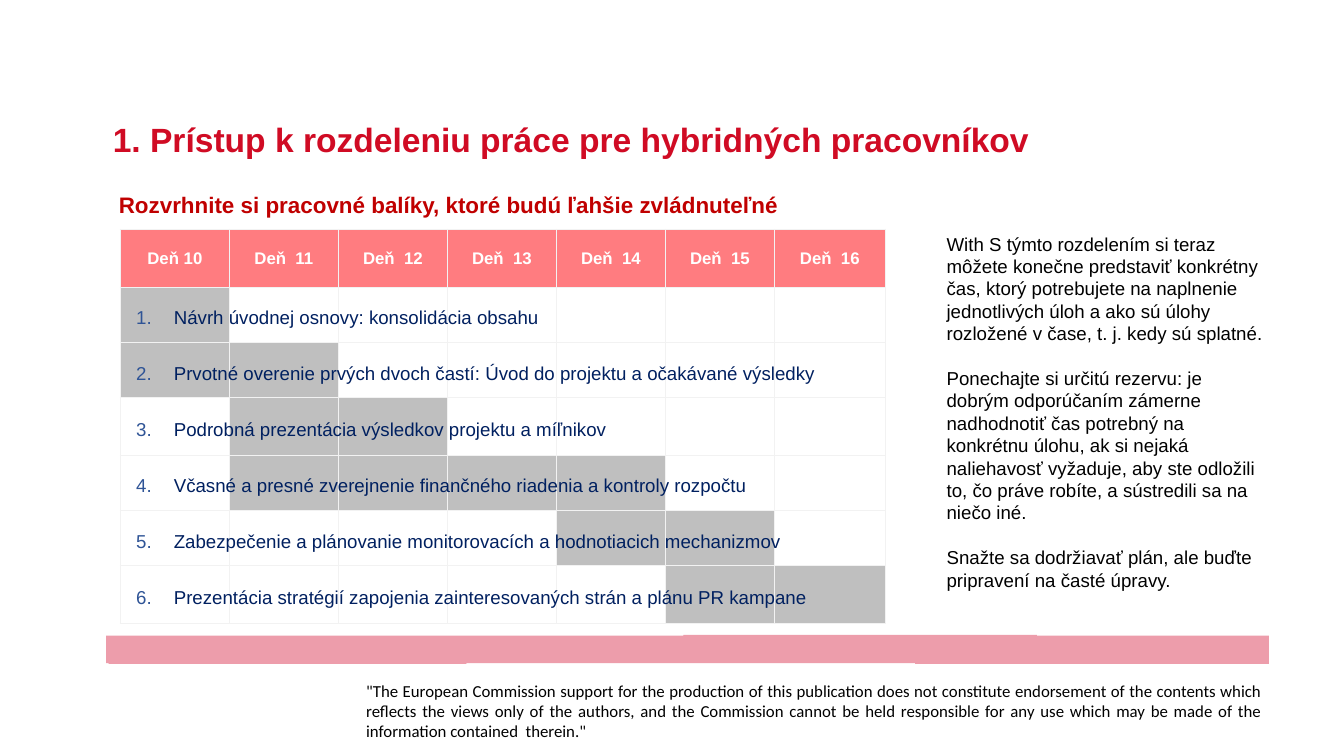
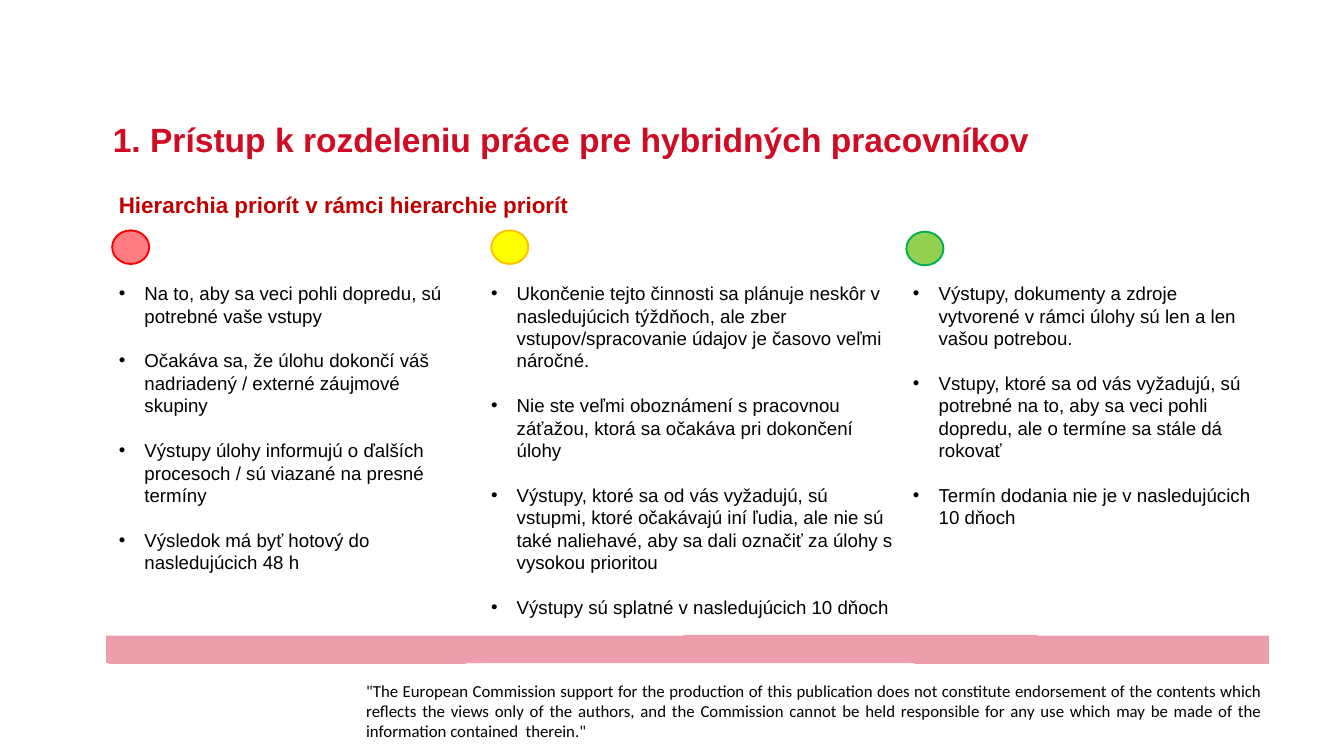
from lxml import etree
from pptx import Presentation
from pptx.dml.color import RGBColor
from pptx.enum import shapes, text
from pptx.oxml import ns
from pptx.util import Cm, Pt

RED = RGBColor(0xD0, 0x0B, 0x24)
DARK = RGBColor(0xC0, 0x00, 0x00)
PINK = RGBColor(0xED, 0x9D, 0xAB)
CORAL = RGBColor(0xFF, 0x7C, 0x80)
BRIGHT = RGBColor(0xFF, 0x00, 0x00)
YELLOW = RGBColor(0xFF, 0xFF, 0x00)
AMBER = RGBColor(0xFF, 0xC0, 0x00)
LIME = RGBColor(0x92, 0xD0, 0x50)
GREEN = RGBColor(0x00, 0xB0, 0x50)
GREY = RGBColor(0xBF, 0xBF, 0xBF)
PALE = RGBColor(0xF2, 0xF2, 0xF2)
WHITE = RGBColor(0xFF, 0xFF, 0xFF)
BLACK = RGBColor(0x00, 0x00, 0x00)
NAVY = RGBColor(0x00, 0x20, 0x60)
BLUE = RGBColor(0x2F, 0x54, 0x96)

TITLE = "1. Prístup k rozdeleniu práce pre hybridných pracovníkov"
NOTICE = (
    '"The European Commission support for the production of this publication '
    "does not constitute endorsement of the contents which reflects the views "
    "only of the authors, and the Commission cannot be held responsible for any "
    'use which may be made of the information contained  therein."'
)
BAND = [
    (47.96, 24.03), (39.19, 24.03), (39.19, 24), (25.83, 24), (25.83, 24.03),
    (4.01, 24.03), (4.01, 25.07), (4.11, 25.07), (4.11, 25.1), (17.63, 25.1),
    (17.63, 25.07), (34.59, 25.07), (34.59, 25.1), (47.96, 25.1),
]

DAYS = ["Deň 10"] + [f"Deň  {day}" for day in range(11, 17)]
WIDTHS = [4.12] * 6 + [4.19]
HEIGHTS = [2.21, 2.08, 2.08, 2.18, 2.08, 2.08, 2.18]
TASKS = [
    ("Návrh úvodnej osnovy: konsolidácia obsahu", 10, 10),
    ("Prvotné overenie prvých dvoch častí: Úvod do projektu a očakávané výsledky", 10, 11),
    ("Podrobná prezentácia výsledkov projektu a míľnikov", 11, 12),
    ("Včasné a presné zverejnenie finančného riadenia a kontroly rozpočtu", 11, 14),
    ("Zabezpečenie a plánovanie monitorovacích a hodnotiacich mechanizmov", 14, 15),
    ("Prezentácia stratégií zapojenia zainteresovaných strán a plánu PR kampane", 15, 16),
]
ADVICE = [
    "With S týmto rozdelením si teraz môžete konečne predstaviť konkrétny čas, "
    "ktorý potrebujete na naplnenie jednotlivých úloh a ako sú úlohy rozložené "
    "v čase, t. j. kedy sú splatné.",
    "Ponechajte si určitú rezervu: je dobrým odporúčaním zámerne nadhodnotiť čas "
    "potrebný na konkrétnu úlohu, ak si nejaká naliehavosť vyžaduje, aby ste "
    "odložili to, čo práve robíte, a sústredili sa na niečo iné.",
    "Snažte sa dodržiavať plán, ale buďte pripravení na časté úpravy.",
]
HIGH = [
    "Na to, aby sa veci pohli dopredu, sú potrebné vaše vstupy",
    "Očakáva sa, že úlohu dokončí váš nadriadený / externé záujmové skupiny",
    "Výstupy úlohy informujú o ďalších procesoch / sú viazané na presné termíny",
    "Výsledok má byť hotový do nasledujúcich 48 h",
]
MEDIUM = [
    "Ukončenie tejto činnosti sa plánuje neskôr v nasledujúcich týždňoch, ale "
    "zber vstupov/spracovanie údajov je časovo veľmi náročné.",
    "Nie ste veľmi oboznámení s pracovnou záťažou, ktorá sa očakáva pri dokončení úlohy",
    "Výstupy, ktoré sa od vás vyžadujú, sú vstupmi, ktoré očakávajú iní ľudia, "
    "ale nie sú také naliehavé, aby sa dali označiť za úlohy s vysokou prioritou",
    "Výstupy sú splatné v nasledujúcich 10 dňoch",
]
LOW = [
    "Výstupy, dokumenty a zdroje vytvorené v rámci úlohy sú len a len vašou potrebou.",
    "Vstupy, ktoré sa od vás vyžadujú, sú potrebné na to, aby sa veci pohli "
    "dopredu, ale o termíne sa stále dá rokovať",
    "Termín dodania nie je v nasledujúcich 10 dňoch",
]


def style(para, size, color, bold=False, face="Arial"):
    font = para.font
    font.name, font.size, font.bold = face, Pt(size), bold
    font.color.rgb = color


def add_fill(parent, color):
    fill = etree.SubElement(parent, ns.qn("a:solidFill"))
    etree.SubElement(fill, ns.qn("a:srgbClr"), val=str(color))


def add_bullet(para, color, indent, tag, **mark):
    props = para._p.get_or_add_pPr()
    props.set("marL", str(Cm(indent)))
    props.set("indent", str(-Cm(indent)))
    tint = etree.SubElement(props, ns.qn("a:buClr"))
    etree.SubElement(tint, ns.qn("a:srgbClr"), val=str(color))
    etree.SubElement(props, ns.qn("a:buFont"), typeface="Arial")
    etree.SubElement(props, ns.qn(tag), **mark)


def add_text(slide, area, lines, size, color, bold=False, gap=0, bullet=None):
    box = slide.shapes.add_textbox(*map(Cm, area))
    frame = box.text_frame
    frame.word_wrap = True
    for index, line in enumerate(lines):
        para = frame.add_paragraph() if index else frame.paragraphs[0]
        para.text = line
        if index:
            para.space_before = Pt(gap)
        if bullet:
            bullet(para)
        style(para, size, color, bold)
    return frame


def add_dots(slide, area, lines):
    def dot(para):
        add_bullet(para, BLACK, 0.97, "a:buChar", char="•")

    add_text(slide, area, lines, 20, BLACK, gap=24, bullet=dot)


def add_steps(slide, area, lines):
    def number(para):
        add_bullet(para, BLUE, 1.42, "a:buAutoNum", type="arabicPeriod")

    add_text(slide, area, lines, 20, NAVY, gap=36, bullet=number)


def add_band(slide):
    points = [(Cm(x), Cm(y)) for x, y in BAND]
    builder = slide.shapes.build_freeform(*points[0], scale=1.0)
    builder.add_line_segments(points[1:], close=True)
    band = builder.convert_to_shape()
    band.shadow.inherit = False
    band.fill.solid()
    band.fill.fore_color.rgb = PINK
    band.line.fill.background()


def add_notice(slide):
    frame = add_text(slide, (13.84, 25.78, 33.86, 1.93), [NOTICE], 18, BLACK)
    frame.margin_left = frame.margin_right = 0
    frame.margin_top = frame.margin_bottom = 0
    para = frame.paragraphs[0]
    para.alignment = text.PP_ALIGN.JUSTIFY
    para.line_spacing = 0.98
    para.font.name = "Calibri"


def add_page(deck, heading):
    slide = deck.slides.add_slide(deck.slide_layouts[5])
    add_band(slide)
    add_notice(slide)
    title = slide.shapes.title
    title.left, title.top, title.width, title.height = map(Cm, (4.01, 4.37, 38.43, 1.8))
    frame = title.text_frame
    frame.text = TITLE
    frame.word_wrap = True
    frame.auto_size = text.MSO_AUTO_SIZE.NONE
    frame.vertical_anchor = text.MSO_ANCHOR.TOP
    para = frame.paragraphs[0]
    para.alignment = text.PP_ALIGN.LEFT
    style(para, 36, RED, True)
    add_text(slide, (4.24, 7.11, 43.46, 1.27), [heading], 24, DARK, True)
    return slide


def paint(cell, color):
    props = cell._tc.get_or_add_tcPr()
    for side in ("L", "R", "T", "B"):
        edge = etree.SubElement(props, ns.qn(f"a:ln{side}"), w=str(Pt(1)))
        add_fill(edge, PALE)
    cell.fill.solid()
    cell.fill.fore_color.rgb = color


def add_plan(slide, left, top):
    frame = slide.shapes.add_table(
        len(HEIGHTS), len(DAYS), Cm(left), Cm(top), Cm(sum(WIDTHS)), Cm(sum(HEIGHTS))
    )
    table = frame.table
    table.horz_banding = False
    for row, height in zip(table.rows, HEIGHTS):
        row.height = Cm(height)
    for col, (day, width) in enumerate(zip(DAYS, WIDTHS)):
        table.columns[col].width = Cm(width)
        head = table.cell(0, col)
        paint(head, CORAL)
        head.text = day
        head.vertical_anchor = text.MSO_ANCHOR.MIDDLE
        para = head.text_frame.paragraphs[0]
        para.alignment = text.PP_ALIGN.CENTER
        style(para, 18, WHITE, True)
        for row, (_, first, last) in enumerate(TASKS, 1):
            busy = first <= col + 10 <= last
            paint(table.cell(row, col), GREY if busy else WHITE)


def add_light(slide, left, top, fill, line):
    light = slide.shapes.add_shape(
        shapes.MSO_SHAPE.OVAL, Cm(left), Cm(top), Cm(1.4), Cm(1.27)
    )
    light.shadow.inherit = False
    light.fill.solid()
    light.fill.fore_color.rgb = fill
    light.line.color.rgb = line
    light.line.width = Pt(2)


def add_schedule(deck):
    slide = add_page(deck, "Rozvrhnite si pracovné balíky, ktoré budú ľahšie zvládnuteľné")
    add_text(slide, (35.53, 8.66, 12.5, 13.94), ADVICE, 20, BLACK, gap=24)
    add_plan(slide, 4.55, 8.66)
    add_steps(slide, (4.9, 11.43, 28.6, 12.01), [task[0] for task in TASKS])


def add_ranking(deck):
    slide = add_page(deck, "Hierarchia priorít v rámci hierarchie priorít")
    add_dots(slide, (4.24, 10.54, 13.44, 13.1), HIGH)
    add_dots(slide, (18.31, 10.54, 15.95, 13.97), MEDIUM)
    add_dots(slide, (34.26, 10.54, 13.44, 9.68), LOW)
    add_light(slide, 34.26, 8.76, LIME, GREEN)
    add_light(slide, 18.57, 8.71, YELLOW, AMBER)
    add_light(slide, 4.24, 8.71, CORAL, BRIGHT)


def main():
    deck = Presentation()
    deck.slide_width, deck.slide_height = Cm(50.8), Cm(28.58)
    add_schedule(deck)
    add_ranking(deck)
    deck.save("out.pptx")


if __name__ == "__main__":
    main()
